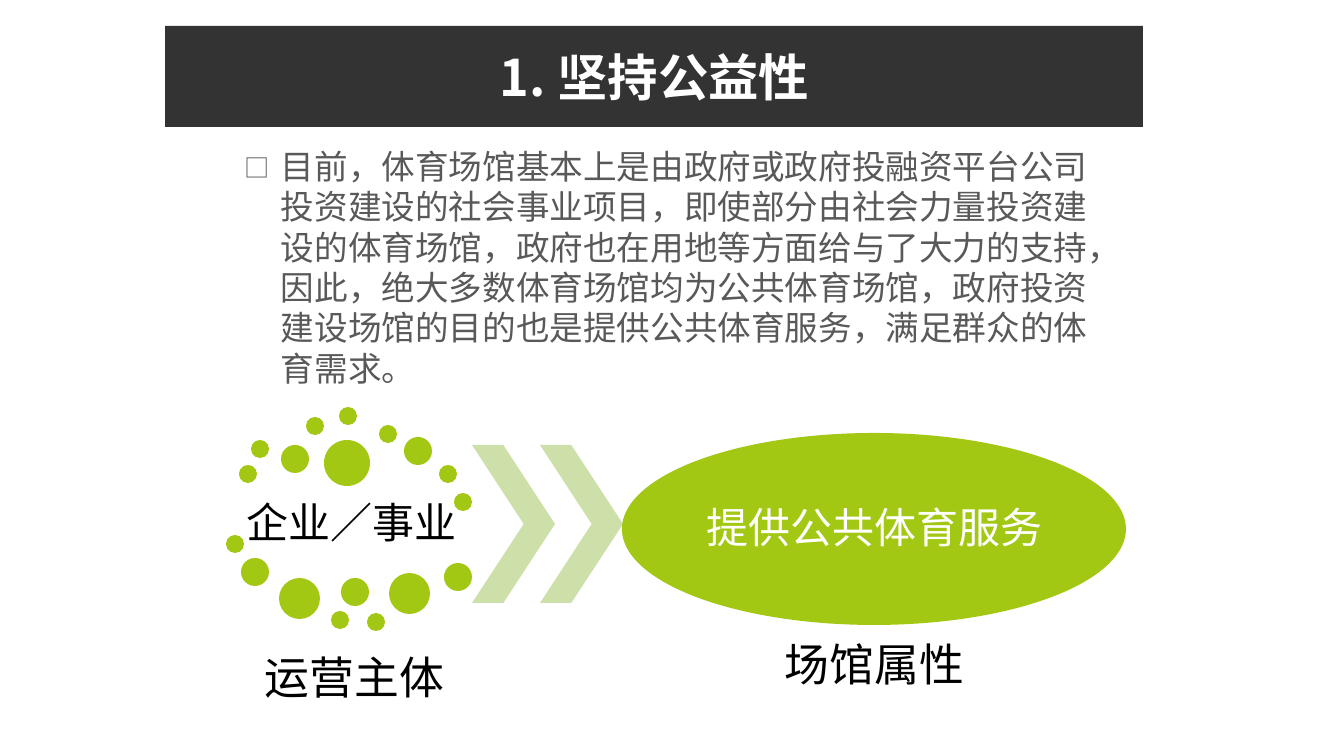
import pptx
import pptx.dml.color
import pptx.enum.shapes
import pptx.enum.text
import pptx.oxml.ns
import pptx.util
from lxml import etree

EMU_PER_PX = 914400 / 100.8
FONT = "Noto Sans CJK SC"
GREEN = "A2C813"
PALE_GREEN = "CDE0A9"
GREY = "595959"
MSO_SHAPE = pptx.enum.shapes.MSO_SHAPE
ALIGN = pptx.enum.text.PP_ALIGN
ANCHOR = pptx.enum.text.MSO_ANCHOR

BODY_TEXT = (
    "目前，体育场馆基本上是由政府或政府投融资平台公司投资建设的社会事业项目，"
    "即使部分由社会力量投资建设的体育场馆，政府也在用地等方面给与了大力的支持，"
    "因此，绝大多数体育场馆均为公共体育场馆，政府投资建设场馆的目的也是提供公共体育服务，"
    "满足群众的体育需求。"
)

# Dot diameter -> left and top of each dot in the ring
RING_DOTS = {
    18: [(239, 465), (251, 440), (306, 417), (339, 407), (379, 425),
         (439, 465), (454, 493), (226, 535), (331, 611), (367, 613)],
    28: [(281, 445), (404, 437), (241, 558), (341, 578), (444, 563)],
    41: [(279, 578), (389, 573)],
    46: [(324, 440)],
}


def px(value):
    return pptx.util.Emu(round(value * EMU_PER_PX))


def color(hex_string):
    return pptx.dml.color.RGBColor.from_string(hex_string)


def place(shape, left, top, width, height):
    shape.left, shape.top = px(left), px(top)
    shape.width, shape.height = px(width), px(height)


def write_text(shape, text, size, fill="000000", bold=False, align=ALIGN.CENTER,
               anchor=ANCHOR.MIDDLE, spacing=0.9, insets=(4, 4, 4, 4)):
    frame = shape.text_frame
    frame.word_wrap = True
    frame.auto_size = pptx.enum.text.MSO_AUTO_SIZE.NONE
    frame.vertical_anchor = anchor
    (frame.margin_left, frame.margin_top,
     frame.margin_right, frame.margin_bottom) = map(px, insets)
    paragraph = frame.paragraphs[0]
    paragraph.alignment = align
    paragraph.line_spacing = spacing
    paragraph.space_before = pptx.util.Pt(0)
    run = paragraph.add_run()
    run.text = text
    run.font.size = pptx.util.Pt(size)
    run.font.bold = bold
    run.font.color.rgb = color(fill)
    run.font.name = FONT
    east_asian = etree.SubElement(run.font._element, pptx.oxml.ns.qn("a:ea"))
    east_asian.set("typeface", FONT)
    return paragraph


def add_bullet(paragraph, character, fill, indent):
    properties = paragraph._p.get_or_add_pPr()
    properties.set("marL", str(px(indent)))
    properties.set("indent", str(-px(indent)))
    bullet_color = etree.SubElement(properties, pptx.oxml.ns.qn("a:buClr"))
    etree.SubElement(bullet_color, pptx.oxml.ns.qn("a:srgbClr")).set("val", fill)
    for tag, name, value in (("a:buSzPct", "val", "75000"),
                             ("a:buFont", "typeface", FONT),
                             ("a:buChar", "char", character)):
        etree.SubElement(properties, pptx.oxml.ns.qn(tag)).set(name, value)


def add_figure(slide, kind, box, fill):
    shape = slide.shapes.add_shape(kind, *map(px, box))
    shape.shadow.inherit = False
    shape.fill.solid()
    shape.fill.fore_color.rgb = color(fill)
    shape.line.fill.background()
    return shape


def add_label(slide, text, box, size):
    write_text(slide.shapes.add_textbox(*map(px, box)), text, size)


def main():
    presentation = pptx.Presentation()
    presentation.slide_width, presentation.slide_height = px(1344), px(756)
    slide = presentation.slides.add_slide(presentation.slide_layouts[1])

    # Title bar
    title = slide.shapes.title
    place(title, 165, 26, 978, 101)
    title.fill.solid()
    title.fill.fore_color.rgb = color("333333")
    write_text(title, "1. 坚持公益性", 36, fill="FFFFFF", bold=True,
               spacing=1.0, insets=(31, 5, 30, 5))

    # Body paragraph
    body = slide.placeholders[1]
    place(body, 224, 141, 904, 264)
    paragraph = write_text(body, BODY_TEXT, 24, fill=GREY, align=ALIGN.LEFT,
                           anchor=ANCHOR.TOP, spacing=1.0, insets=(21, 5, 9, 5))
    add_bullet(paragraph, "□", GREY, 36)

    # Operator: ring of dots with labels
    for diameter, corners in RING_DOTS.items():
        for left, top in corners:
            add_figure(slide, MSO_SHAPE.OVAL, (left, top, diameter, diameter), GREEN)
    add_label(slide, "企业／事业", (239, 487, 225, 75), 30)
    add_label(slide, "运营主体", (242, 650, 225, 59), 32)

    # Double chevron
    for left in (472, 540):
        chevron = add_figure(slide, MSO_SHAPE.CHEVRON, (left, 445, 83, 158), PALE_GREEN)
        chevron.adjustments[0] = 0.623

    # Venue: service ellipse with label
    service = add_figure(slide, MSO_SHAPE.OVAL, (622, 433, 504, 192), GREEN)
    write_text(service, "提供公共体育服务", 30, fill="FFFFFF", insets=(1, 1, 0, 0))
    add_label(slide, "场馆属性", (762, 637, 225, 59), 32)

    presentation.save("out.pptx")


if __name__ == "__main__":
    main()
